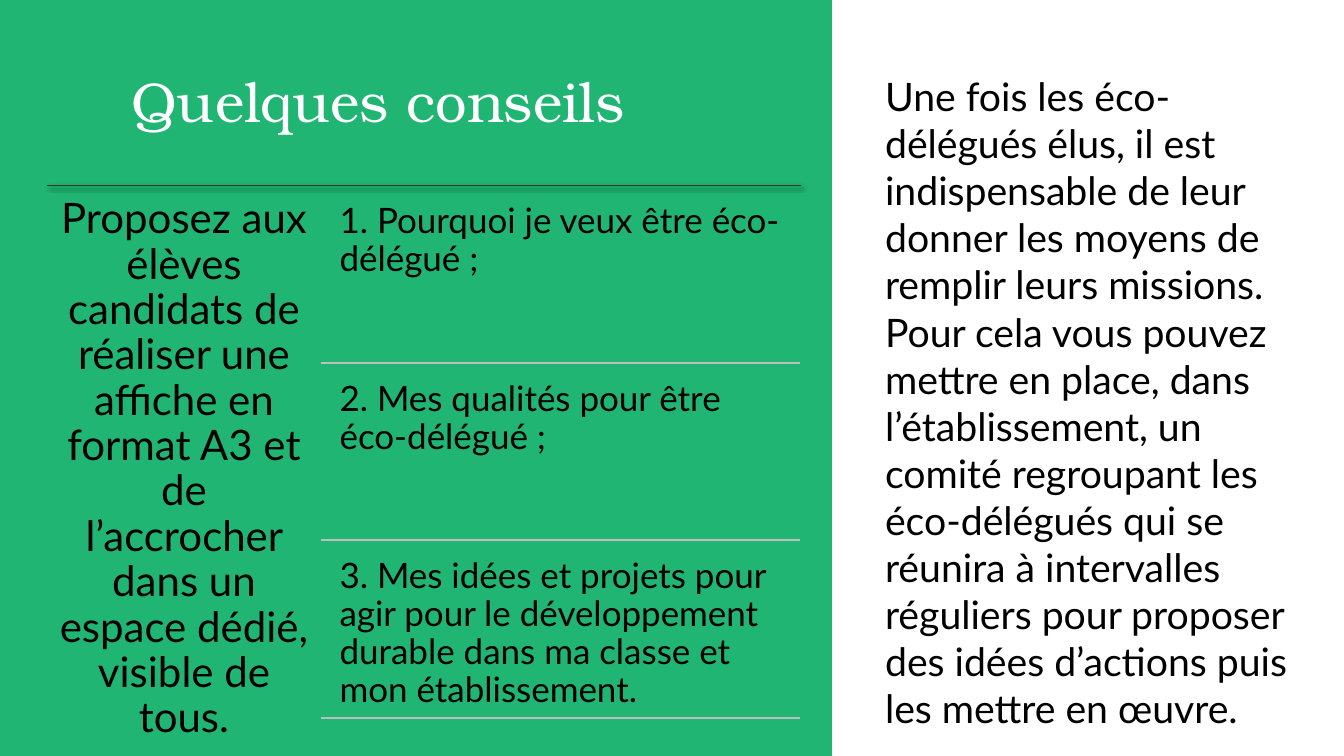
from lxml import etree
from pptx import Presentation
from pptx.dml.color import RGBColor
from pptx.enum.shapes import MSO_CONNECTOR as Connector, MSO_SHAPE as Shape
from pptx.enum.text import MSO_ANCHOR as Anchor, MSO_AUTO_SIZE as AutoSize, PP_ALIGN as Align
from pptx.oxml.ns import qn
from pptx.util import Inches, Pt

# Content
TITLE = "Quelques conseils"
POSTER = ("Proposez aux élèves candidats de réaliser une affiche en format A3 "
          "et de l’accrocher dans un espace dédié, visible de tous.")
POSTER_TOPICS = [
    "1. Pourquoi je veux être éco-délégué ;",
    "2. Mes qualités pour être éco-délégué ;",
    "3. Mes idées et projets pour agir pour le développement durable "
    "dans ma classe et mon établissement.",
]
COMMITTEE = ("Une fois les éco-délégués élus, il est indispensable de leur donner "
             "les moyens de remplir leurs missions. Pour cela vous pouvez mettre en "
             "place, dans l’établissement, un comité regroupant les éco-délégués qui "
             "se réunira à intervalles réguliers pour proposer des idées d’actions "
             "puis les mettre en œuvre.")

# Formats
GREEN, WHITE, BLACK, DARK, GREY = "20B573", "FFFFFF", "000000", "313820", "BEBFBD"
TITLE_FONT = {"name": "TeX Gyre Bonum", "size": Pt(40)}
POSTER_FONT = {"name": "Lato", "size": Pt(30)}
TOPIC_FONT = {"name": "Lato", "size": Pt(25)}
COMMITTEE_FONT = {"name": "Lato", "size": Pt(28)}
TIGHT = {"line_spacing": 0.9}
CENTRED = {"line_spacing": 0.9, "alignment": Align.CENTER}

# Layout
LIST_TOP, TOPIC_TOP, TOPIC_HEIGHT, TOPIC_STEP = 1.84, 1.92, 1.68, 1.76


def color(value):
    return RGBColor.from_string(value)


def apply(target, values):
    for name, value in values.items():
        setattr(target, name, value)


def write(shape, text, font, paragraph_format, font_color=BLACK, margin=None):
    frame = shape.text_frame
    frame.word_wrap = True
    frame.auto_size = AutoSize.NONE
    if margin is not None:
        for side in ("left", "top", "right", "bottom"):
            setattr(frame, f"margin_{side}", Inches(margin))
    paragraph = frame.paragraphs[0]
    apply(paragraph, paragraph_format)
    run = paragraph.add_run()
    run.text = text
    apply(run.font, font)
    run.font.color.rgb = color(font_color)
    return run


def add_text(slide, box, *args, **options):
    shape = slide.shapes.add_textbox(*map(Inches, box))
    write(shape, *args, **options)
    return shape


def add_rule(slide, left, right, top, line_color, width, shadow=False):
    ends = map(Inches, (left, top, right, top))
    rule = slide.shapes.add_connector(Connector.STRAIGHT, *ends)
    rule.line.color.rgb = color(line_color)
    rule.line.width = Pt(width)
    effects = etree.SubElement(rule.element.spPr, qn("a:effectLst"))
    if shadow:
        outer = etree.SubElement(effects, qn("a:outerShdw"), blurRad=str(Pt(3)),
                                 dist=str(Pt(2)), dir=str(45 * 60000))
        black = etree.SubElement(outer, qn("a:srgbClr"), val=BLACK)
        etree.SubElement(black, qn("a:alpha"), val="60000")


def main():
    presentation = Presentation()
    apply(presentation, {"slide_width": Inches(13.33), "slide_height": Inches(7.5)})
    slide = presentation.slides.add_slide(presentation.slide_layouts[5])

    # Title
    title = slide.shapes.title
    apply(title, {"left": Inches(1.2), "top": Inches(0.57),
                  "width": Inches(6.54), "height": Inches(0.82)})
    run = write(title, TITLE, TITLE_FONT, {**TIGHT, "alignment": Align.LEFT}, WHITE)
    run.font.element.set("spc", "-50") if hasattr(run.font, "element") else None
    title.text_frame.vertical_anchor = Anchor.BOTTOM

    # Green panel, behind the title
    panel = slide.shapes.add_shape(Shape.RECTANGLE, 0, 0, Inches(8.25), Inches(7.5))
    panel.shadow.inherit = False
    panel.fill.solid()
    panel.fill.fore_color.rgb = color(GREEN)
    panel.line.fill.background()
    title.element.addprevious(panel.element)

    # Committee paragraph on the right
    committee = add_text(slide, (8.68, 0.67, 4.19, 6.7), COMMITTEE, COMMITTEE_FONT,
                         {"space_after": Pt(6)})
    committee.text_frame.auto_size = AutoSize.SHAPE_TO_FIT_TEXT

    # Poster advice and its topics
    add_rule(slide, 0.47, 7.94, LIST_TOP, DARK, 1, shadow=True)
    add_text(slide, (0.47, LIST_TOP, 2.71, 5.36), POSTER, POSTER_FONT, CENTRED, margin=0.12)
    for index, topic in enumerate(POSTER_TOPICS):
        top = TOPIC_TOP + index * TOPIC_STEP
        add_text(slide, (3.27, top, 4.67, TOPIC_HEIGHT), topic, TOPIC_FONT, TIGHT, margin=0.1)
        add_rule(slide, 3.18, 7.93, top + TOPIC_HEIGHT, GREY, 1.25)

    presentation.save("out.pptx")


if __name__ == "__main__":
    main()
